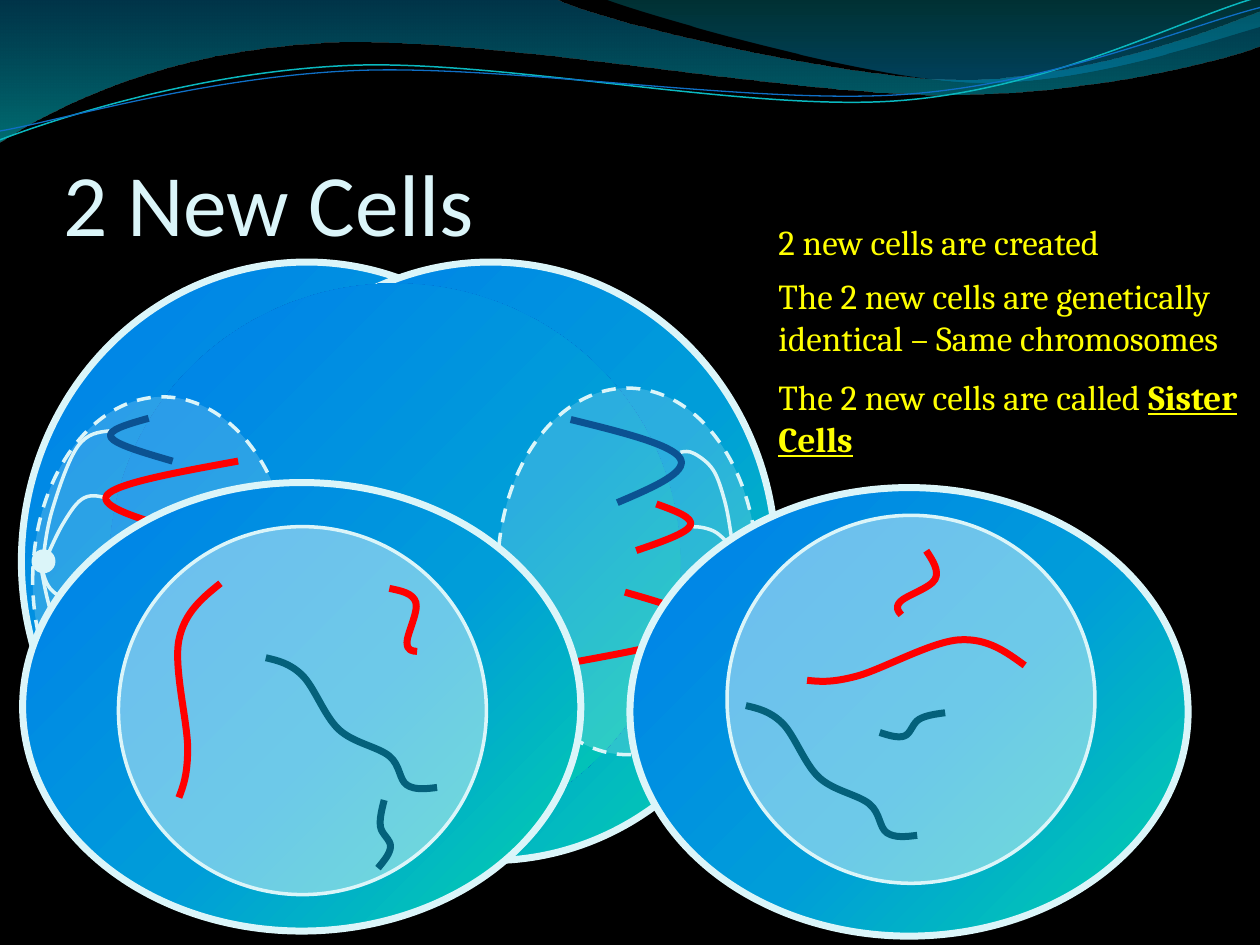
from collections import namedtuple

from lxml import etree
from pptx import Presentation
from pptx.dml.color import RGBColor
from pptx.enum.dml import MSO_LINE
from pptx.enum.shapes import MSO_SHAPE
from pptx.enum.text import MSO_ANCHOR, MSO_AUTO_SIZE, PP_ALIGN
from pptx.oxml import parse_xml
from pptx.oxml.ns import nsdecls, qn
from pptx.util import Cm, Pt

ELLIPSE, DASH = MSO_SHAPE.OVAL, MSO_LINE.DASH
BOTTOM, LEFT = MSO_ANCHOR.BOTTOM, PP_ALIGN.LEFT
NO_FIT, GROW = MSO_AUTO_SIZE.NONE, MSO_AUTO_SIZE.SHAPE_TO_FIT_TEXT

BLACK = RGBColor(0x00, 0x00, 0x00)
PALE = RGBColor(0xDB, 0xF5, 0xF9)
RED = RGBColor(0xFF, 0x00, 0x00)
NAVY = RGBColor(0x0B, 0x52, 0x92)
TEAL = RGBColor(0x04, 0x61, 0x7B)
YELLOW = RGBColor(0xFF, 0xFF, 0x00)
AQUA = RGBColor(0x0A, 0xB8, 0xBF)
BLUE = RGBColor(0x0F, 0x6F, 0xC6)
CELL_STOPS = [(0, RGBColor(0x03, 0xD4, 0xA8), 100), (45, RGBColor(0x00, 0x9D, 0xD9), 100),
              (85, RGBColor(0x00, 0x87, 0xE6), 100), (100, RGBColor(0x00, 0x5C, 0xBF), 100)]
BACK_STOPS = [(0, RGBColor(0x00, 0x74, 0xA1), 45), (100, RGBColor(0x00, 0xC6, 0xCF), 55)]
FRONT_STOPS = [(0, RGBColor(0x00, 0xA1, 0xA9), 30), (80, RGBColor(0x00, 0x8B, 0xBF), 45)]
RADIAL = '<a:path path="circle"><a:fillToRect l="100000" t="100000"/></a:path>'
DOWNWARD = '<a:lin ang="5400000" scaled="1"/>'

Edge = namedtuple("Edge", "knots handles", defaults=[None])
Move = namedtuple("Move", "dx dy angle")
Chromosome = namedtuple("Chromosome", "color knots move")
STAY = Move(0, 0, 0)

BACK_WAVE = [Edge([(0, 0)]),
             Edge([(4.4, -0.01), (7.58, 0.63), (10, 0.09)], [(4.76, 0.17), (9.58, 0.26)]),
             Edge([(10.01, 0.36), (7.46, 0.75), (2.57, 0.34), (-0.01, 1.13)],
                  [(9.83, 0.44), (0.46, 0.83)])]
FRONT_WAVE = [Edge([(4.79, -0.01), (7.69, 0.65), (10, 0.21)], [(5.09, 0.11), (9.61, 0.32)]),
              Edge([(10, 0)])]
AQUA_WAVE = Edge([(0, 1.11), (2.77, 0.52), (7.13, 0.8), (9.98, -0.02)],
                 [(0.48, 0.93), (9.38, 0.15)])
BLUE_WAVE = Edge([(0, 1.04), (2.83, 0.56), (7.17, 0.75), (10, 0.06)],
                 [(0.47, 0.96), (9.41, 0.21)])

LEFT_FIBRES = [[(0.87, 3.42), (0.62, 3.54), (0.42, 4.03), (0.34, 4.46)],
               [(0.87, 3.96), (0.67, 3.95), (0.51, 4.14), (0.35, 4.47)],
               [(1.01, 5.22), (0.76, 5.25), (0.47, 5.01), (0.33, 4.53)],
               [(0.92, 4.8), (0.73, 4.83), (0.44, 4.71), (0.34, 4.54)]]
RIGHT_FIBRES = [[(5.4, 3.59), (5.51, 3.6), (5.66, 3.73), (5.75, 3.97), (5.8, 4.23), (5.82, 4.42)],
                [(5.49, 4.18), (5.59, 4.19), (5.69, 4.23), (5.78, 4.32), (5.83, 4.43)],
                [(5.55, 4.94), (5.62, 4.98), (5.71, 4.88), (5.78, 4.78), (5.83, 4.5)],
                [(5.55, 5.49), (5.62, 5.5), (5.71, 5.44), (5.78, 5.23), (5.82, 4.88), (5.84, 4.5)]]

PARENT_CENTER = (3.21, 4.46)
PULLED_CHROMOSOMES = [(RED, [(4.53, 5.26), (5.57, 4.99), (4.96, 4.7)]),
                      (NAVY, [(4.53, 3.33), (5.4, 3.64), (4.9, 3.99)]),
                      (RED, [(5.05, 4.37), (5.48, 4.17), (5.21, 4)]),
                      (NAVY, [(5.05, 5.26), (5.54, 5.45), (5.24, 5.6)])]

SISTER_CHROMOSOMES = [
    Chromosome(RED, [(1.75, 4.63), (1.42, 5.08), (1.49, 5.94), (1.42, 6.33)],
               Move(5.7, -0.16, 75.1)),
    Chromosome(RED, [(3.09, 4.67), (3.3, 4.78), (3.23, 5.1), (3.31, 5.17)],
               Move(4.05, -0.29, 45)),
    Chromosome(TEAL, [(3.47, 6.25), (3.23, 6.23), (3.09, 6), (2.69, 5.79), (2.4, 5.36),
                      (2.11, 5.22)], Move(3.81, 0.38, 0)),
    Chromosome(TEAL, [(3, 6.89), (3.1, 6.72), (3.02, 6.56), (3.05, 6.35)],
               Move(4.2, -0.86, 68))]

NOTES = [(1.7, 0.44, ["2 new cells are created"]),
         (2.13, 0.77, ["The 2 new cells are genetically identical – Same chromosomes"]),
         (2.93, 0.77, ["The 2 new cells are called ", "Sister Cells"])]


def length(inches):
    return Cm(inches * 2.54)


def midpoint(a, b):
    return (a[0] + b[0]) / 2, (a[1] + b[1]) / 2


def opposite(point, center):
    return 2 * center[0] - point[0], 2 * center[1] - point[1]


def smooth(edge):
    """Return Bezier points through the knots, each tangent parallel to its neighbours' chord."""
    knots = edge.knots
    if len(knots) == 1:
        return knots
    points = [knots[0]]
    for before, knot, after in zip(knots, knots[1:], knots[2:]):
        tx, ty = (after[0] - before[0]) / 6, (after[1] - before[1]) / 6
        points += [(knot[0] - tx, knot[1] - ty), knot, (knot[0] + tx, knot[1] + ty)]
    first, last = edge.handles or (midpoint(knots[0], points[1]),
                                   midpoint(points[-1], knots[-1]))
    return [points[0], first, *points[1:], last, knots[-1]]


class Deck:
    """Holds the fonts and the current slide, and draws each kind of element."""

    heading_font, body_font = "Calibri", "Cambria"

    def __init__(self, prs):
        self.slide = prs.slides.add_slide(prs.slide_layouts[5])
        fill = self.slide.background.fill
        fill.solid()
        fill.fore_color.rgb = BLACK

    def style(self, sp, color=None, width=0, dash=None):
        sp.shadow.inherit = False
        sp.fill.background()
        if color is None:
            sp.line.fill.background()
            return
        sp.line.color.rgb = color
        sp.line.width = Pt(width)
        if dash:
            sp.line.dash_style = dash

    def gradient(self, sp, stops, direction):
        spPr = sp._element.spPr
        items = "".join(
            f'<a:gs pos="{pos * 1000}"><a:srgbClr val="{color}">'
            f'<a:alpha val="{alpha * 1000}"/></a:srgbClr></a:gs>'
            for pos, color, alpha in stops)
        spPr.replace(spPr.find(qn("a:noFill")), parse_xml(
            f'<a:gradFill {nsdecls("a")} rotWithShape="1"><a:gsLst>{items}</a:gsLst>'
            f'{direction}</a:gradFill>'))

    def cell(self, box, color=None, width=0):
        sp = self.slide.shapes.add_shape(ELLIPSE, *map(length, box))
        self.style(sp, color, width)
        self.gradient(sp, CELL_STOPS, RADIAL)

    def nucleus(self, box, opacity, color=None, width=0, dash=None):
        sp = self.slide.shapes.add_shape(ELLIPSE, *map(length, box))
        self.style(sp, color, width, dash)
        sp.fill.solid()
        sp.fill.fore_color.rgb = PALE
        clr = sp._element.spPr.find(qn("a:solidFill"))[0]
        etree.SubElement(clr, qn("a:alpha")).set("val", str(opacity * 1000))

    def outline(self, edges, move=STAY, close=False):
        runs = [smooth(edge) for edge in edges]
        points = [(length(x + move.dx), length(y + move.dy)) for run in runs for x, y in run]
        bent = [i > 0 for run in runs for i in range(len(run))]
        builder = self.slide.shapes.build_freeform(*points[0])
        builder.add_line_segments(points[1:], close=close)
        sp = builder.convert_to_shape()
        segments = list(sp._element.iter(qn("a:lnTo")))
        bends = [seg for seg, is_bent in zip(segments, bent[1:]) if is_bent]
        for bezier, *extras in zip(bends[::3], bends[1::3], bends[2::3]):
            bezier.tag = qn("a:cubicBezTo")
            for extra in extras:
                bezier.append(extra[0])
                extra.getparent().remove(extra)
        sp.rotation = move.angle
        return sp

    def strand(self, edge, color, width, move=STAY):
        self.style(self.outline([edge], move), color, width)

    def wave(self, edges, stops):
        sp = self.outline(edges, close=True)
        self.style(sp)
        self.gradient(sp, stops, DOWNWARD)

    def title(self, text, box):
        sp = self.slide.shapes.title
        sp.left, sp.top, sp.width, sp.height = map(length, box)
        tf = sp.text_frame
        tf.text = text
        tf.auto_size, tf.vertical_anchor = NO_FIT, BOTTOM
        tf.margin_left = tf.margin_right = tf.margin_bottom = 0
        p = tf.paragraphs[0]
        p.alignment = LEFT
        self.font(p.runs[0], self.heading_font, 50, PALE)

    def note(self, parts, box):
        tf = self.slide.shapes.add_textbox(*map(length, box)).text_frame
        tf.word_wrap, tf.auto_size = True, GROW
        for i, part in enumerate(parts):
            r = tf.paragraphs[0].add_run()
            r.text = part
            self.font(r, self.body_font, 20, YELLOW)
            if i:
                r.font.bold = r.font.underline = True

    def font(self, r, name, size, color):
        r.font.name, r.font.size = name, Pt(size)
        r.font.color.rgb = color


def draw_waves(deck):
    deck.wave(BACK_WAVE, BACK_STOPS)
    deck.wave(FRONT_WAVE, FRONT_STOPS)
    deck.strand(AQUA_WAVE, AQUA, 0.85)
    deck.strand(BLUE_WAVE, BLUE, 0.75)


def draw_parent_cell(deck):
    for x in (0.17, 1.63):
        deck.cell((x, 2.08, 4.53, 4.75), PALE, 4)
    deck.cell((0.87, 2.25, 4.53, 4.42))
    for x, y in ((0.26, 3.15), (3.95, 3.08)):
        deck.nucleus((x, y, 2.06, 2.91), 20, PALE, 2, DASH)
    for x in (0.25, 5.75):
        deck.nucleus((x, 4.36, 0.19, 0.19), 100)
    for knots in LEFT_FIBRES + RIGHT_FIBRES:
        deck.strand(Edge(knots), PALE, 2)
    for color, knots in PULLED_CHROMOSOMES:
        deck.strand(Edge(knots), color, 4)
        deck.strand(Edge([opposite(knot, PARENT_CENTER) for knot in knots]), color, 4)


def draw_sister_cell(deck, cell, nucleus, moved):
    deck.cell((*cell, 4.43, 3.56), PALE, 4)
    deck.nucleus((*nucleus, 2.92, 2.92), 50, PALE, 2)
    for chromosome in SISTER_CHROMOSOMES:
        deck.strand(Edge(chromosome.knots), chromosome.color, 4,
                    chromosome.move if moved else STAY)


def main():
    prs = Presentation()
    prs.slide_width, prs.slide_height = length(10), length(7.5)
    deck = Deck(prs)
    deck.title("2 New Cells", (0.5, 0.77, 9, 1.25))
    draw_waves(deck)
    draw_parent_cell(deck)
    draw_sister_cell(deck, (0.18, 3.83), (0.94, 4.18), moved=False)
    draw_sister_cell(deck, (5, 3.87), (5.77, 4.09), moved=True)
    for y, height, parts in NOTES:
        deck.note(parts, (6.08, y, 3.92, height))
    prs.save("out.pptx")


if __name__ == "__main__":
    main()
